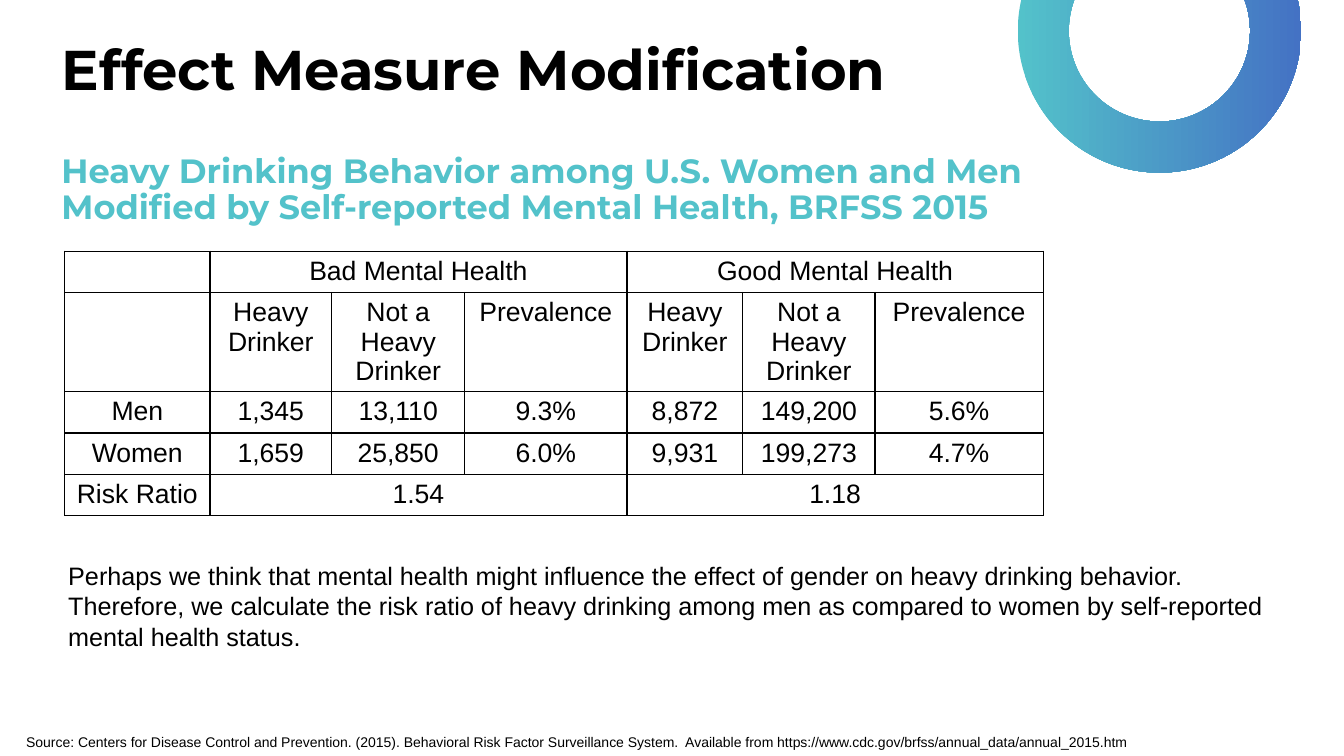
from dataclasses import dataclass

import pptx
import pptx.dml.color
import pptx.enum.shapes
import pptx.enum.text
import pptx.oxml
import pptx.oxml.ns
import pptx.util

Cm = pptx.util.Cm
Pt = pptx.util.Pt
LEFT = pptx.enum.text.PP_ALIGN.LEFT
CENTER = pptx.enum.text.PP_ALIGN.CENTER

BLACK = "000000"
TEAL = "53C2CA"
BLUE = "4472C4"

COLUMN_WIDTHS = [3.66, 3.07, 3.35, 4.09, 2.92, 3.33, 4.24]
ROW_HEIGHTS = [1.04, 2.5, 1.04, 1.04, 1.04]
MEASURES = ["Heavy Drinker", "Not a Heavy Drinker", "Prevalence"]
PREVALENCE_ROWS = [
    ["", "Bad Mental Health", "", "", "Good Mental Health", "", ""],
    ["", *MEASURES, *MEASURES],
    ["Men", "1,345", "13,110", "9.3%", "8,872", "149,200", "5.6%"],
    ["Women", "1,659", "25,850", "6.0%", "9,931", "199,273", "4.7%"],
    ["Risk Ratio", "1.54", "", "", "1.18", "", ""],
]
GROUPED_ROWS = [0, 4]
GROUP_STARTS = [1, 4]


@dataclass(frozen=True)
class TextStyle:
    font: str
    size: float
    colour: str = BLACK
    bold: bool = False
    line_spacing: float = 1.0
    align: int = LEFT


@dataclass(frozen=True)
class Box:
    left: float
    top: float
    width: float
    height: float

    def lengths(self) -> list:
        return [Cm(v) for v in (self.left, self.top, self.width, self.height)]


@dataclass(frozen=True)
class Passage:
    box: Box
    text: str
    style: TextStyle


HEADING = Passage(
    Box(1.3, -0.81, 23.8, 5.28),
    "Effect Measure Modification",
    TextStyle("Montserrat", 40, bold=True, line_spacing=0.9),
)
PASSAGES = [
    Passage(
        Box(1.3, 3.76, 27.13, 2.95),
        "Heavy Drinking Behavior among U.S. Women and Men "
        "Modified by Self-reported Mental Health, BRFSS 2015",
        TextStyle("Montserrat", 24, TEAL, True, 0.9),
    ),
    Passage(
        Box(0.41, 18.36, 33.07, 0.68),
        "Source: Centers for Disease Control and Prevention. (2015). "
        "Behavioral Risk Factor Surveillance System.  Available from "
        "https://www.cdc.gov/brfss/annual_data/annual_2015.htm",
        TextStyle("Arial", 10),
    ),
    Passage(
        Box(1.47, 14.0, 30.91, 2.57),
        "Perhaps we think that mental health might influence the effect of "
        "gender on heavy drinking behavior. Therefore, we calculate the risk "
        "ratio of heavy drinking among men as compared to women by "
        "self-reported mental health status.",
        TextStyle("Arial", 18),
    ),
]
CELL_STYLE = TextStyle("Arial", 19, align=CENTER)


def rgb(colour: str) -> pptx.dml.color.RGBColor:
    return pptx.dml.color.RGBColor.from_string(colour)


def write(frame, text: str, style: TextStyle) -> None:
    paragraph = frame.paragraphs[0]
    paragraph.alignment = style.align
    paragraph.line_spacing = style.line_spacing
    run = paragraph.add_run()
    run.text = text
    run.font.name = style.font
    run.font.size = Pt(style.size)
    run.font.bold = style.bold
    run.font.color.rgb = rgb(style.colour)


def draw_ring(slide) -> None:
    ring = slide.shapes.add_shape(
        pptx.enum.shapes.MSO_SHAPE.DONUT, *Box(25.65, -2.79, 7.14, 7.14).lengths()
    )
    ring.shadow.inherit = False
    ring.adjustments[0] = 0.18
    ring.line.fill.background()
    ring.fill.gradient()
    ring.fill.gradient_angle = 0
    for stop, colour in zip(ring.fill.gradient_stops, (TEAL, BLUE)):
        stop.color.rgb = rgb(colour)


def fill_title(slide, heading: Passage) -> None:
    title = slide.shapes.title
    title.left, title.top, title.width, title.height = heading.box.lengths()
    title.text_frame.auto_size = pptx.enum.text.MSO_AUTO_SIZE.NONE
    title.text_frame.vertical_anchor = pptx.enum.text.MSO_ANCHOR.MIDDLE
    write(title.text_frame, heading.text, heading.style)


def draw_passage(slide, passage: Passage) -> None:
    frame = slide.shapes.add_textbox(*passage.box.lengths()).text_frame
    frame.word_wrap = True
    write(frame, passage.text, passage.style)


def outline(cell, colour: str, width: float) -> None:
    properties = cell._tc.get_or_add_tcPr()
    for side in "LRTB":
        properties.append(
            pptx.oxml.parse_xml(
                f'<a:ln{side} {pptx.oxml.ns.nsdecls("a")} w="{Pt(width)}">'
                f'<a:solidFill><a:srgbClr val="{colour}"/></a:solidFill>'
                f"</a:ln{side}>"
            )
        )


def draw_prevalence_table(slide) -> None:
    box = Box(1.63, 6.33, sum(COLUMN_WIDTHS), sum(ROW_HEIGHTS))
    table = slide.shapes.add_table(
        len(ROW_HEIGHTS), len(COLUMN_WIDTHS), *box.lengths()
    ).table
    table.first_row = False
    table.horz_banding = False
    for column, width in zip(table.columns, COLUMN_WIDTHS):
        column.width = Cm(width)
    for row, height in zip(table.rows, ROW_HEIGHTS):
        row.height = Cm(height)
    for r in GROUPED_ROWS:
        for start in GROUP_STARTS:
            table.cell(r, start).merge(table.cell(r, start + len(MEASURES) - 1))
    for r, values in enumerate(PREVALENCE_ROWS):
        for c, value in enumerate(values):
            cell = table.cell(r, c)
            outline(cell, BLACK, 1)
            cell.fill.background()
            if value:
                write(cell.text_frame, value, CELL_STYLE)


def main() -> None:
    presentation = pptx.Presentation()
    presentation.slide_width = Cm(33.87)
    presentation.slide_height = Cm(19.05)
    slide = presentation.slides.add_slide(presentation.slide_layouts[5])
    draw_ring(slide)
    fill_title(slide, HEADING)
    draw_prevalence_table(slide)
    for passage in PASSAGES:
        draw_passage(slide, passage)
    presentation.save("out.pptx")


if __name__ == "__main__":
    main()
